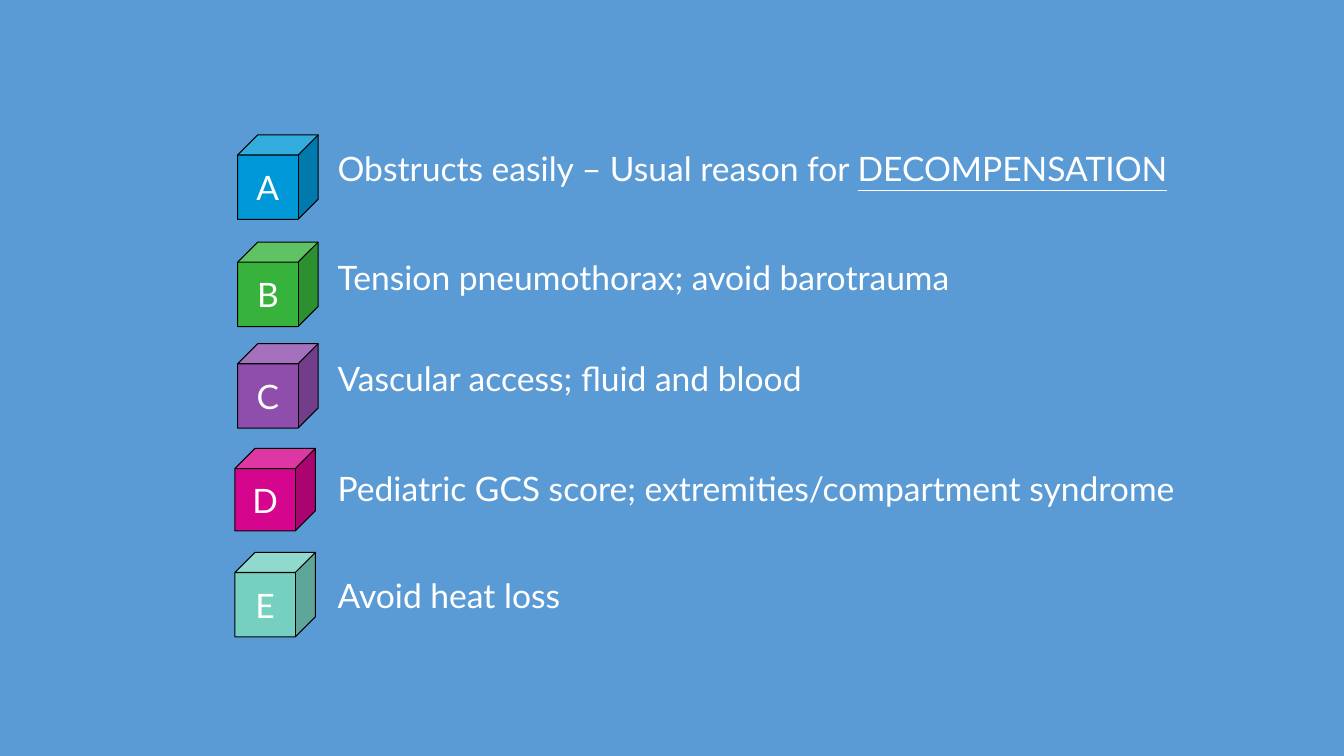
import dataclasses
import typing

import pptx
import pptx.dml.color
import pptx.enum.shapes
import pptx.enum.text
import pptx.util

Cm = pptx.util.Cm
Pt = pptx.util.Pt

COLORS = {
    "background": "5B9BD5",
    "text": "FFFFFF",
    "outline": "000000",
    "A": "0098D7",
    "B": "37B33D",
    "C": "8F4DAC",
    "D": "D5068D",
    "E": "75D0C0",
}
FONT = {"name": "Lato", "size": Pt(24)}
CUBE_FRAME = {
    "word_wrap": False,
    "vertical_anchor": pptx.enum.text.MSO_ANCHOR.MIDDLE,
}
NOTE_FRAME = {
    "word_wrap": True,
    "auto_size": pptx.enum.text.MSO_AUTO_SIZE.SHAPE_TO_FIT_TEXT,
}
CUBE_WIDTH = 2.03
NOTE_LEFT = 8.26
NOTE_HEIGHT = 1.27


@dataclasses.dataclass(frozen=True)
class Step:
    """One row of the survey; lengths are in centimetres."""
    letter: str
    note: str
    cube_left: float
    cube_top: float
    note_top: float
    cube_height: float = 2.13
    note_width: float = 20.75
    underlined: str = ""


STEPS = [
    Step("A", "Obstructs easily – Usual reason for ", 5.99, 3.4, 3.61,
         note_width=22.2, underlined="DECOMPENSATION"),
    Step("B", "Tension pneumothorax; avoid barotrauma", 5.99, 6.1, 6.35),
    Step("C", "Vascular access; fluid and blood", 5.99, 8.66, 8.89),
    Step("D", "Pediatric GCS score; extremities/compartment syndrome",
         5.92, 11.3, 11.66, cube_height=2.08, note_width=22.89),
    Step("E", "Avoid heat loss", 5.92, 13.92, 14.35),
]


def rgb(name: str) -> pptx.dml.color.RGBColor:
    return pptx.dml.color.RGBColor.from_string(COLORS[name])


def apply(target: typing.Any, values: dict[str, typing.Any]) -> None:
    for key, value in values.items():
        setattr(target, key, value)


def add_run(p: typing.Any, text: str, **extra: typing.Any) -> None:
    r = p.add_run()
    r.text = text
    apply(r.font, {**FONT, **extra})
    r.font.color.rgb = rgb("text")


def add_cube(shapes: typing.Any, step: Step) -> None:
    sp = shapes.add_shape(
        pptx.enum.shapes.MSO_SHAPE.CUBE, Cm(step.cube_left), Cm(step.cube_top),
        Cm(CUBE_WIDTH), Cm(step.cube_height))
    sp.shadow.inherit = False
    sp.fill.solid()
    sp.fill.fore_color.rgb = rgb(step.letter)
    sp.line.color.rgb = rgb("outline")
    sp.line.width = Pt(0.75)
    apply(sp.text_frame, CUBE_FRAME)
    p = sp.text_frame.paragraphs[0]
    p.alignment = pptx.enum.text.PP_ALIGN.CENTER
    add_run(p, step.letter)


def add_note(shapes: typing.Any, step: Step) -> None:
    sp = shapes.add_textbox(Cm(NOTE_LEFT), Cm(step.note_top),
                            Cm(step.note_width), Cm(NOTE_HEIGHT))
    apply(sp.text_frame, NOTE_FRAME)
    p = sp.text_frame.paragraphs[0]
    add_run(p, step.note)
    if step.underlined:
        add_run(p, step.underlined, underline=True)


def main() -> None:
    prs = pptx.Presentation()
    apply(prs, {"slide_width": Cm(33.87), "slide_height": Cm(19.05)})
    s = prs.slides.add_slide(prs.slide_layouts.get_by_name("Blank"))
    s.background.fill.solid()
    s.background.fill.fore_color.rgb = rgb("background")
    for step in STEPS:
        add_cube(s.shapes, step)
        add_note(s.shapes, step)
    prs.save("out.pptx")


if __name__ == "__main__":
    main()
